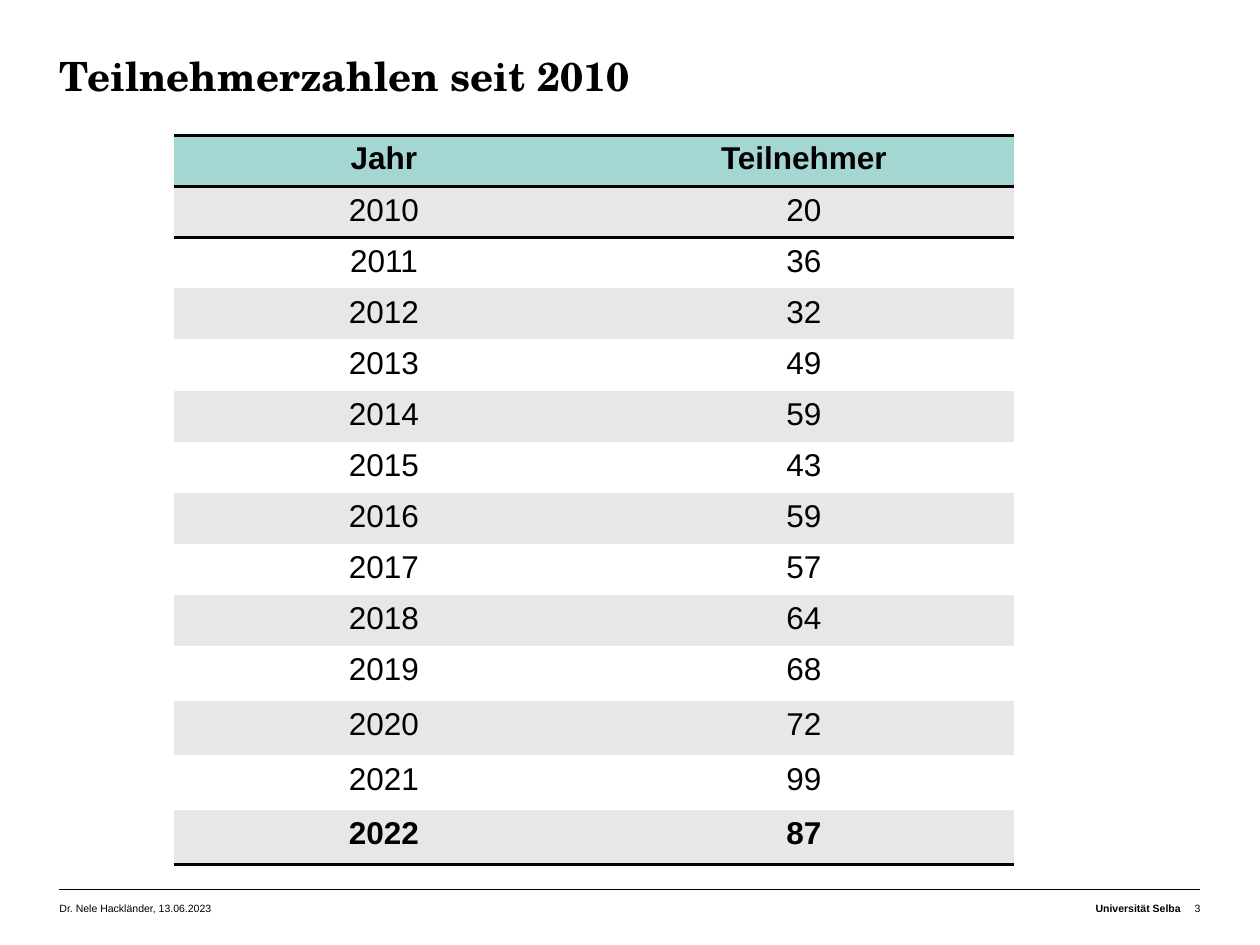
from lxml.etree import SubElement
from pptx import Presentation
from pptx.dml.color import RGBColor
from pptx.enum.shapes import MSO_CONNECTOR as Connector
from pptx.enum.text import PP_ALIGN as Align
from pptx.oxml import parse_xml
from pptx.oxml.ns import nsdecls, qn
from pptx.util import Pt

BLACK = RGBColor(0x00, 0x00, 0x00)
WHITE = RGBColor(0xFF, 0xFF, 0xFF)
GREY = RGBColor(0xE7, 0xE7, 0xE7)
MINT = RGBColor(0xA5, 0xD7, 0xD2)
NO_GRID = "{2D5ABB26-0587-4C30-8999-92F81FD0307C}"


def write(para, text, align=Align.LEFT, **font):
    para.alignment = align
    span = para.add_run()
    span.text = text
    span.font.color.rgb = BLACK
    for key, value in font.items():
        setattr(span.font, key, value)


def add_border(cell, side):
    border = parse_xml(
        f'<a:{side} {nsdecls("a")} w="{Pt(2)}"><a:solidFill>'
        f'<a:srgbClr val="{BLACK}"/></a:solidFill></a:{side}>'
    )
    properties = cell._tc.get_or_add_tcPr()
    properties.insert(len(properties.findall(qn("a:lnT"))), border)


deck = Presentation()
deck.slide_width, deck.slide_height = Pt(720), Pt(540)
page = deck.slides.add_slide(deck.slide_layouts[6])

rule = page.shapes.add_connector(
    Connector.STRAIGHT, Pt(34), Pt(508.3), Pt(686), Pt(508.3)
)
rule.line.color.rgb = BLACK
rule.line.width = Pt(0.25)
SubElement(rule._element.spPr, qn("a:effectLst"))

title_font = {"name": "TeX Gyre Schola", "size": Pt(23), "bold": True}
small = {"name": "Arial", "size": Pt(6), "bold": False}
small_bold = {**small, "bold": True}
texts = [
    ("Teilnehmerzahlen seit 2010", 34, 31.7, 652, 60, 0, Align.LEFT, title_font),
    ("Dr. Nele Hackländer, 13.06.2023", 34, 514, 170, 14.4, 1.44, Align.LEFT, small),
    ("Universität Selba", 524.2, 514, 150.5, 14.4, 1.44, Align.RIGHT, small_bold),
    ("3", 674.7, 514, 11.3, 14.4, 1.44, Align.RIGHT, small),
]
for text, left, top, width, height, inset, align, font in texts:
    box = page.shapes.add_textbox(Pt(left), Pt(top), Pt(width), Pt(height))
    frame = box.text_frame
    margins = {"margin_left": 0, "margin_top": Pt(inset), "margin_right": 0,
               "margin_bottom": 0, "word_wrap": True}
    for key, value in margins.items():
        setattr(frame, key, value)
    write(frame.paragraphs[0], text, align, **font)
    if font is title_font:
        frame.paragraphs[0].line_spacing = Pt(25)

counts = [20, 36, 32, 49, 59, 43, 59, 57, 64, 68, 72, 99, 87]
rows = [("Jahr", "Teilnehmer"), *enumerate(counts, start=2010)]
last = len(rows) - 1
table = page.shapes.add_table(
    len(rows), 2, Pt(99.4), Pt(77.2), Pt(480), Pt(416.8)
).table
table._tbl.tblPr.find(qn("a:tableStyleId")).text = NO_GRID
table.horz_banding = False

for index, values in enumerate(rows):
    table.rows[index].height = Pt(29.2 if index < 10 else 31.2)
    for cell, value in zip(table.rows[index].cells, values):
        cell.fill.solid()
        cell.fill.fore_color.rgb = MINT if index == 0 else GREY if index % 2 else WHITE
        write(cell.text_frame.paragraphs[0], str(value), Align.CENTER,
              name="Arial", size=Pt(18), bold=index in (0, last))
        if index in (0, 1):
            add_border(cell, "lnT")
        if index in (0, last):
            add_border(cell, "lnB")

deck.save("out.pptx")
